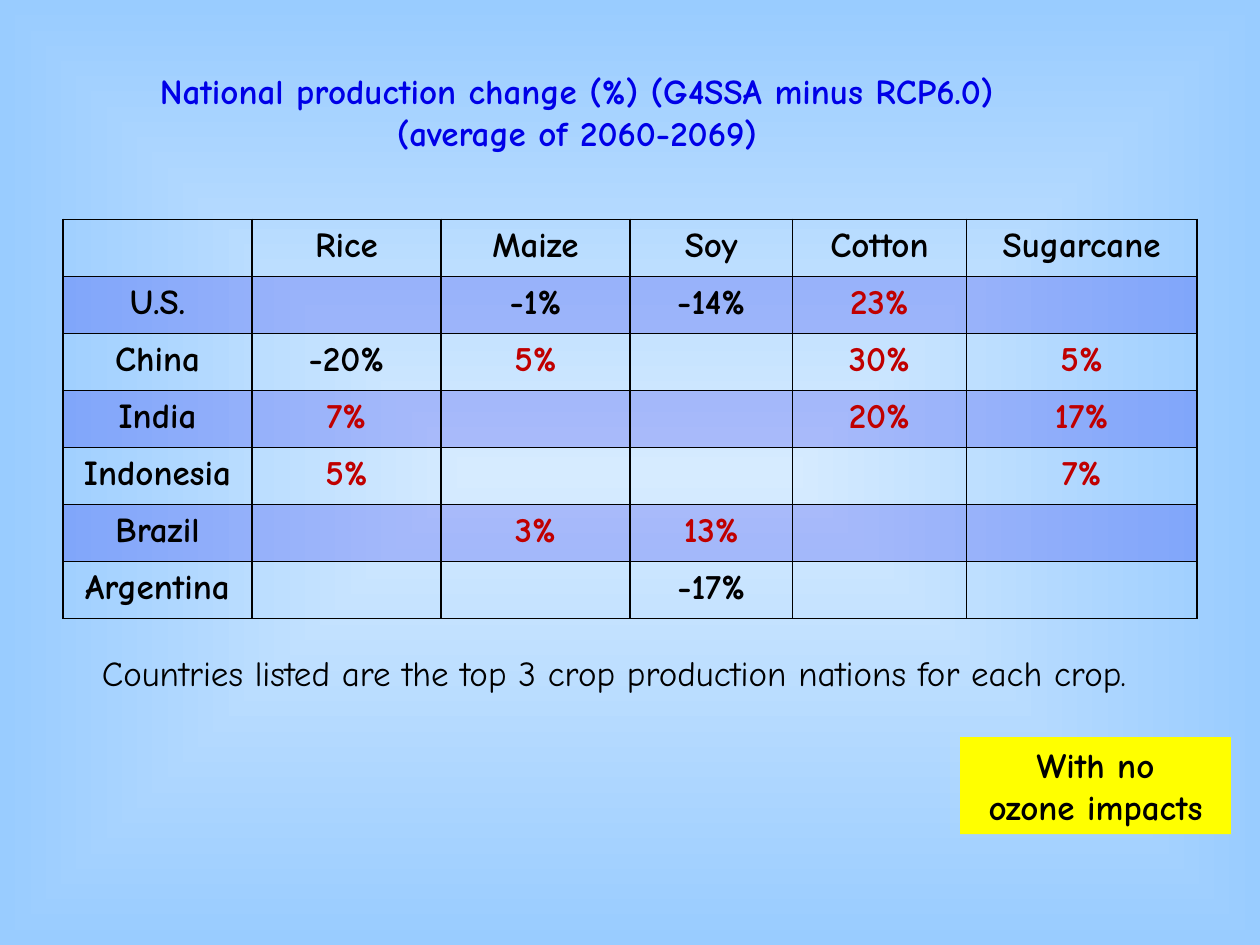
from dataclasses import dataclass

from lxml import etree
from pptx import Presentation
from pptx.dml.color import RGBColor
from pptx.enum.shapes import MSO_SHAPE
from pptx.enum.text import MSO_AUTO_SIZE, PP_ALIGN
from pptx.oxml.ns import qn
from pptx.util import Inches, Pt

CENTER = PP_ALIGN.CENTER
LEFT = PP_ALIGN.LEFT
RECTANGLE = MSO_SHAPE.RECTANGLE
FIT_SHAPE = MSO_AUTO_SIZE.SHAPE_TO_FIT_TEXT


@dataclass(frozen=True)
class Theme:
    """Colours, font and sizes of the slide."""
    font: str = "Comic Neue"
    size: int = 20
    border: int = 1
    black: str = "000000"
    blue: str = "0000E7"
    red: str = "C00000"
    yellow: str = "FFFF00"
    glow: str = "D6EBFF"
    sky: str = "99CCFF"
    band_alpha: int = 20


THEME = Theme()
COLUMN_WIDTHS = [1.5, 1.5, 1.5, 1.29, 1.38, 1.83]
PRODUCTION = [
    ["", "Rice", "Maize", "Soy", "Cotton", "Sugarcane"],
    ["U.S.", "", "-1%", "-14%", "23%", ""],
    ["China", "-20%", "5%", "", "30%", "5%"],
    ["India", "7%", "", "", "20%", "17%"],
    ["Indonesia", "5%", "", "", "", "7%"],
    ["Brazil", "", "3%", "13%", "", ""],
    ["Argentina", "", "", "-17%", "", ""],
]


def write_text(paragraph, text, color=THEME.black, bold=True, align=LEFT):
    """Write formatted text into a paragraph."""
    paragraph.text = text
    paragraph.alignment = align
    for run in paragraph.runs:
        run.font.name = THEME.font
        run.font.size = Pt(THEME.size)
        run.font.bold = bold
        run.font.color.rgb = RGBColor.from_string(color)


def paint_background(slide):
    """Fill the slide with a gradient that spreads from its centre."""
    fill = slide.background.fill
    fill.gradient()
    for stop, color in zip(fill.gradient_stops, (THEME.glow, THEME.sky)):
        stop.color.rgb = RGBColor.from_string(color)
    gradient = slide.element.find(".//" + qn("a:gradFill"))
    gradient.remove(gradient.find(qn("a:lin")))
    spread = etree.SubElement(gradient, qn("a:path"), path="shape")
    etree.SubElement(spread, qn("a:fillToRect"), l="50000", t="50000", r="50000", b="50000")


def add_text_lines(slide, box, lines):
    """Place an unwrapped text box; each line is a text and its format."""
    frame = slide.shapes.add_textbox(*map(Inches, box)).text_frame
    frame.word_wrap = False
    frame.auto_size = FIT_SHAPE
    for index, (text, text_format) in enumerate(lines):
        paragraph = frame.add_paragraph() if index else frame.paragraphs[0]
        write_text(paragraph, text, **text_format)


def style_cell(cell, banded):
    """Draw the borders of a cell and its translucent band."""
    properties = cell._tc.get_or_add_tcPr()
    for side in ("a:lnL", "a:lnR", "a:lnT", "a:lnB"):
        line = etree.SubElement(properties, qn(side), w=str(Pt(THEME.border)))
        solid = etree.SubElement(line, qn("a:solidFill"))
        etree.SubElement(solid, qn("a:srgbClr"), val=THEME.black)
    if not banded:
        cell.fill.background()
        return
    cell.fill.solid()
    cell.fill.fore_color.rgb = RGBColor.from_string(THEME.blue)
    color = properties.find(qn("a:solidFill")).find(qn("a:srgbClr"))
    etree.SubElement(color, qn("a:alpha"), val=str(THEME.band_alpha * 1000))


def add_production_table(slide, box):
    """Place the table of production changes, with gains in red."""
    table = slide.shapes.add_table(len(PRODUCTION), len(COLUMN_WIDTHS), *map(Inches, box)).table
    table.first_row = False
    table.horz_banding = False
    for column, width in zip(table.columns, COLUMN_WIDTHS):
        column.width = Inches(width)
    for row_index, values in enumerate(PRODUCTION):
        for column_index, value in enumerate(values):
            cell = table.cell(row_index, column_index)
            style_cell(cell, banded=row_index % 2 == 1)
            is_gain = value.endswith("%") and not value.startswith("-")
            color = THEME.red if is_gain else THEME.black
            write_text(cell.text_frame.paragraphs[0], value, color=color, align=CENTER)


def add_note(slide, box, text):
    """Place the highlighted note."""
    shape = slide.shapes.add_shape(RECTANGLE, *map(Inches, box))
    shape.shadow.inherit = False
    shape.fill.solid()
    shape.fill.fore_color.rgb = RGBColor.from_string(THEME.yellow)
    shape.line.fill.background()
    shape.text_frame.word_wrap = True
    shape.text_frame.auto_size = FIT_SHAPE
    write_text(shape.text_frame.paragraphs[0], text, align=CENTER)


def main():
    """Build the slide and save it."""
    presentation = Presentation()
    presentation.slide_width = Inches(10)
    presentation.slide_height = Inches(7.5)
    slide = presentation.slides.add_slide(presentation.slide_layouts[6])
    paint_background(slide)
    add_production_table(slide, (0.5, 1.74, 9, 3.17))
    add_text_lines(slide, (1.17, 0.5, 7.65, 0.77), [
        ("National production change (%) (G4SSA minus RCP6.0)", {"color": THEME.blue}),
        ("(average of 2060-2069)", {"color": THEME.blue, "align": CENTER}),
    ])
    add_text_lines(slide, (0.71, 5.12, 9.17, 0.44), [
        ("Countries listed are the top 3 crop production nations for each crop.", {"bold": False}),
    ])
    add_note(slide, (7.62, 5.85, 2.15, 0.77), "With no\vozone impacts")
    presentation.save("out.pptx")


if __name__ == "__main__":
    main()
